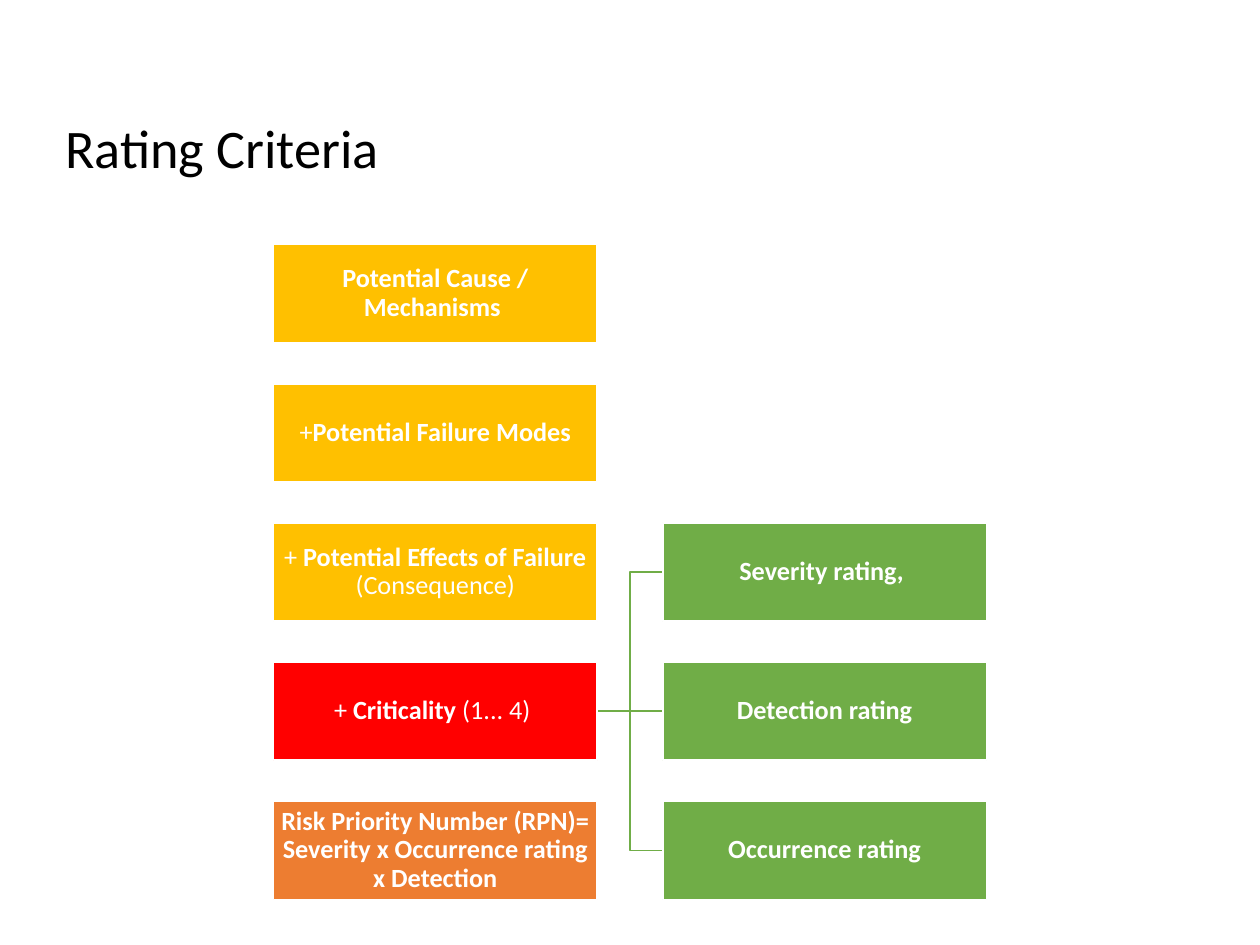
from dataclasses import dataclass
from lxml.etree import SubElement
from pptx import Presentation
from pptx.dml.color import RGBColor as RGB
from pptx.enum.shapes import MSO_CONNECTOR as LINK, MSO_SHAPE as SHAPE
from pptx.enum.text import MSO_ANCHOR as ANCHOR, PP_ALIGN as ALIGN
from pptx.oxml.ns import qn
from pptx.util import Inches, Pt


@dataclass(frozen=True)
class Theme:
    font: str = "Calibri"
    title: Pt = Pt(31)
    body: Pt = Pt(15)
    line: Pt = Pt(1)
    black: RGB = RGB(0, 0, 0)
    white: RGB = RGB(255, 255, 255)
    gold: RGB = RGB(0xFF, 0xC0, 0x00)
    red: RGB = RGB(0xFF, 0, 0)
    orange: RGB = RGB(0xED, 0x7D, 0x31)
    green: RGB = RGB(0x70, 0xAD, 0x47)


theme = Theme()
deck = Presentation()
deck.slide_width, deck.slide_height = Inches(10), Inches(7.5)
slide = deck.slides.add_slide(deck.slide_layouts[6])
shapes = slide.shapes

# Grid: two columns, five rows
left, right, top = 2.17, 5.26, 1.94
wide, high, step = 2.57, 0.78, 1.105


def style(par, size, color):
    par.line_spacing = 0.9
    par.font.name, par.font.size = theme.font, size
    par.font.color.rgb = color


# Title, raised above the foot of its box
box = shapes.add_textbox(Inches(0.42), Inches(0.2), Inches(4.37), Inches(1.78))
frame = box.text_frame
frame.word_wrap = True
frame.vertical_anchor = ANCHOR.BOTTOM
frame.margin_bottom = Inches(0.55)
frame.text = "Rating Criteria"
style(frame.paragraphs[0], theme.title, theme.black)

# Links from criticality to the three ratings
start = top + 3 * step + high / 2
for row in (4, 3, 2):
    end = top + row * step + high / 2
    kind = LINK.STRAIGHT if row == 3 else LINK.ELBOW
    link = shapes.add_connector(kind, Inches(left + wide), Inches(start),
                                Inches(right), Inches(end))
    link.line.color.rgb, link.line.width = theme.green, theme.line
    SubElement(link._element.spPr, qn("a:effectLst"))

# Boxes: column, row, fill, runs of (text, bold)
boxes = [
    (left, 0, theme.gold, [("Potential Cause / Mechanisms ", True)]),
    (left, 1, theme.gold, [("+", False), ("Potential Failure Modes", True)]),
    (left, 2, theme.gold, [("+ ", False), ("Potential Effects of Failure", True),
                           (" (Consequence)", False)]),
    (left, 3, theme.red, [("+ ", False), ("Criticality", True),
                          (" (1... 4) ", False)]),
    (right, 2, theme.green, [("Severity rating, ", True)]),
    (right, 3, theme.green, [("Detection rating", True)]),
    (right, 4, theme.green, [("Occurrence rating", True)]),
    (left, 4, theme.orange, [("Risk Priority Number (RPN)= Severity x "
                              "Occurrence rating x Detection", True)]),
]
for x, row, fill, runs in boxes:
    box = shapes.add_shape(SHAPE.RECTANGLE, Inches(x), Inches(top + row * step),
                           Inches(wide), Inches(high))
    box.shadow.inherit = False
    box.fill.solid()
    box.fill.fore_color.rgb = fill
    box.line.color.rgb, box.line.width = theme.white, theme.line
    frame = box.text_frame
    frame.word_wrap = True
    frame.vertical_anchor = ANCHOR.MIDDLE
    frame.margin_left = frame.margin_right = Inches(0.01)
    frame.margin_top = frame.margin_bottom = Inches(0.01)
    par = frame.paragraphs[0]
    par.alignment = ALIGN.CENTER
    style(par, theme.body, theme.white)
    for text, bold in runs:
        run = par.add_run()
        run.text, run.font.bold = text, bold

deck.save("out.pptx")
